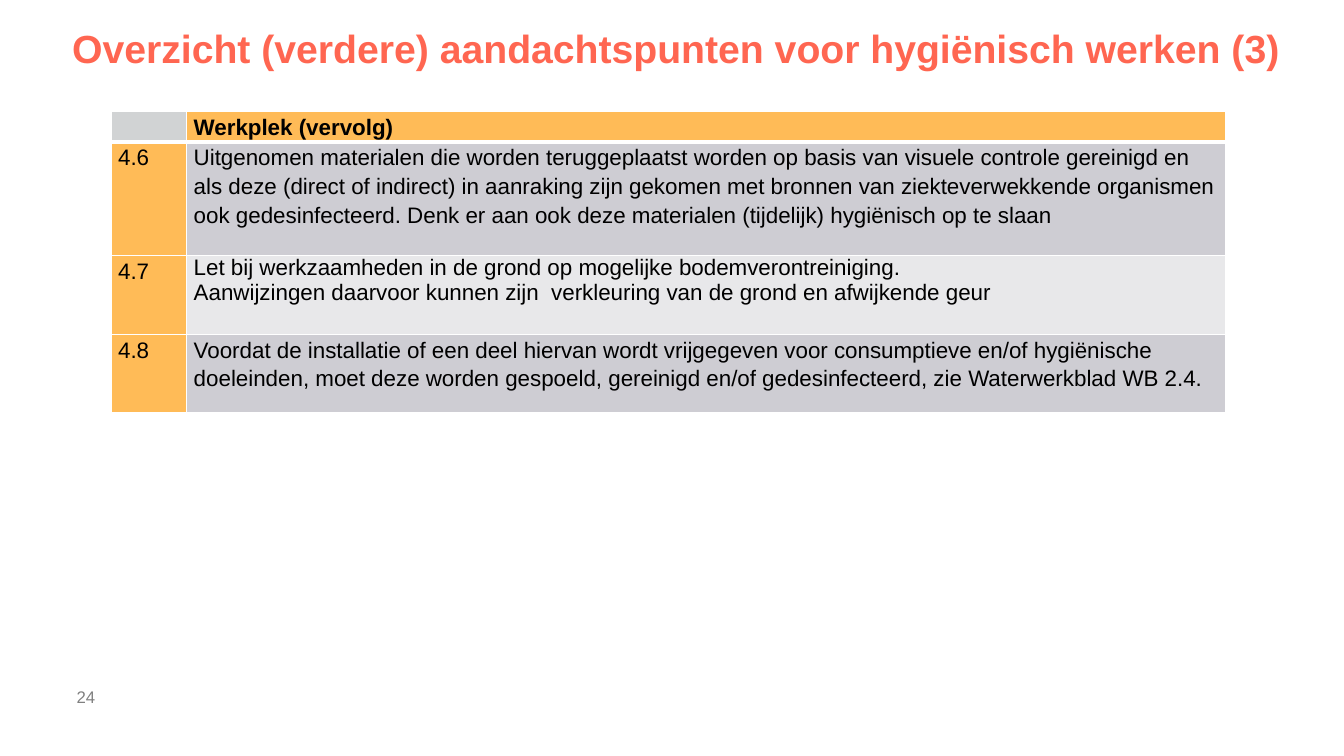
import dataclasses

import lxml.etree
import pptx
import pptx.dml.color
import pptx.enum.text
import pptx.oxml.ns
import pptx.util

Pt = pptx.util.Pt

COLOURS = {
    "title": "FF6651",
    "text": "000000",
    "page number": "808080",
    "orange": "FFBB57",
    "corner": "D1D3D4",
    "dark band": "CECDD3",
    "light band": "E8E8EA",
    "border": "FFFFFF",
}


@dataclasses.dataclass(frozen=True)
class TableRow:
    number: str
    paragraphs: tuple[str, ...]
    height: float
    number_fill: str
    text_fill: str
    bold: bool = False
    line_spacing: float = 1.15
    bottom_border: float = 1


TABLE_ROWS = [
    TableRow("", ("Werkplek (vervolg)",), 21.6, "corner", "orange",
             bold=True, bottom_border=3),
    TableRow("4.6", (
        "Uitgenomen materialen die worden teruggeplaatst worden op basis van visuele "
        "controle gereinigd en als deze (direct of indirect) in aanraking zijn gekomen "
        "met bronnen van ziekteverwekkende organismen ook gedesinfecteerd. Denk er aan "
        "ook deze materialen (tijdelijk) hygiënisch op te slaan",
    ), 81.2, "orange", "dark band"),
    TableRow("4.7", (
        "Let bij werkzaamheden in de grond op mogelijke bodemverontreiniging.",
        "Aanwijzingen daarvoor kunnen zijn  verkleuring van de grond en afwijkende geur",
    ), 56.2, "orange", "light band", line_spacing=1),
    TableRow("4.8", (
        "Voordat de installatie of een deel hiervan wordt vrijgegeven voor consumptieve "
        "en/of hygiënische doeleinden, moet deze worden gespoeld, gereinigd en/of "
        "gedesinfecteerd, zie Waterwerkblad WB 2.4.",
    ), 56.2, "orange", "dark band"),
]
COLUMN_WIDTHS = (54, 742.3)


def colour(name: str) -> pptx.dml.color.RGBColor:
    return pptx.dml.color.RGBColor.from_string(COLOURS[name])


def write_text(text_frame, *paragraphs: str, size: float = 16, color: str = "text",
               bold: bool = False, line_spacing: float = 1.0,
               alignment=pptx.enum.text.PP_ALIGN.LEFT) -> None:
    """Fill a text frame with evenly formatted paragraphs."""
    text_frame.word_wrap = True
    for index, text in enumerate(paragraphs):
        paragraph = text_frame.paragraphs[0] if index == 0 else text_frame.add_paragraph()
        paragraph.alignment = alignment
        paragraph.line_spacing = line_spacing
        run = paragraph.add_run()
        run.text = text
        run.font.name = "Arial"
        run.font.size = Pt(size)
        run.font.bold = bold
        run.font.color.rgb = colour(color)


def center_without_margins(text_frame) -> None:
    text_frame.margin_left = text_frame.margin_right = 0
    text_frame.margin_top = text_frame.margin_bottom = 0
    text_frame.vertical_anchor = pptx.enum.text.MSO_ANCHOR.MIDDLE
    text_frame.auto_size = pptx.enum.text.MSO_AUTO_SIZE.NONE


def set_borders(cell, **widths: float) -> None:
    """Draw white cell borders; they must precede the fill in the XML."""
    properties = cell._tc.get_or_add_tcPr()
    qn = pptx.oxml.ns.qn
    for side, width in widths.items():
        line = lxml.etree.SubElement(properties, qn(f"a:ln{side}"), w=str(Pt(width)))
        fill = lxml.etree.SubElement(line, qn("a:solidFill"))
        lxml.etree.SubElement(fill, qn("a:srgbClr"), val=COLOURS["border"])


def format_cell(cell, fill: str, top: float, bottom: float) -> None:
    cell.margin_left = cell.margin_right = Pt(5)
    cell.margin_top = cell.margin_bottom = 0
    set_borders(cell, L=1, R=1, T=top, B=bottom)
    cell.fill.solid()
    cell.fill.fore_color.rgb = colour(fill)


def add_points_table(slide, rows: list[TableRow]) -> None:
    frame = slide.shapes.add_table(
        len(rows), len(COLUMN_WIDTHS), Pt(79.4), Pt(79.4),
        Pt(sum(COLUMN_WIDTHS)), Pt(sum(row.height for row in rows)))
    table = frame.table
    for column, width in zip(table.columns, COLUMN_WIDTHS):
        column.width = Pt(width)
    top_border = 1
    for index, row in enumerate(rows):
        table.rows[index].height = Pt(row.height)
        number_cell, text_cell = table.rows[index].cells
        format_cell(number_cell, row.number_fill, top_border, row.bottom_border)
        format_cell(text_cell, row.text_fill, top_border, row.bottom_border)
        if row.number:
            write_text(number_cell.text_frame, row.number, line_spacing=1.15)
        write_text(text_cell.text_frame, *row.paragraphs, bold=row.bold,
                   line_spacing=row.line_spacing)
        top_border = row.bottom_border


def main() -> None:
    presentation = pptx.Presentation()
    presentation.slide_width = Pt(960)
    presentation.slide_height = Pt(540)
    slide = presentation.slides.add_slide(presentation.slide_layouts[5])

    # Title
    title = slide.shapes.title
    title.left, title.top, title.width, title.height = Pt(44.6), Pt(16.6), Pt(876.2), Pt(38.9)
    center_without_margins(title.text_frame)
    write_text(title.text_frame,
               "Overzicht (verdere) aandachtspunten voor hygiënisch werken (3)",
               size=28, color="title", bold=True, line_spacing=0.9,
               alignment=pptx.enum.text.PP_ALIGN.CENTER)

    # Table of points
    add_points_table(slide, TABLE_ROWS)

    # Page number
    page_number = slide.shapes.add_textbox(Pt(54.7), Pt(483.1), Pt(51.1), Pt(28.8))
    center_without_margins(page_number.text_frame)
    write_text(page_number.text_frame, "24", size=12, color="page number")

    presentation.save("out.pptx")


if __name__ == "__main__":
    main()
